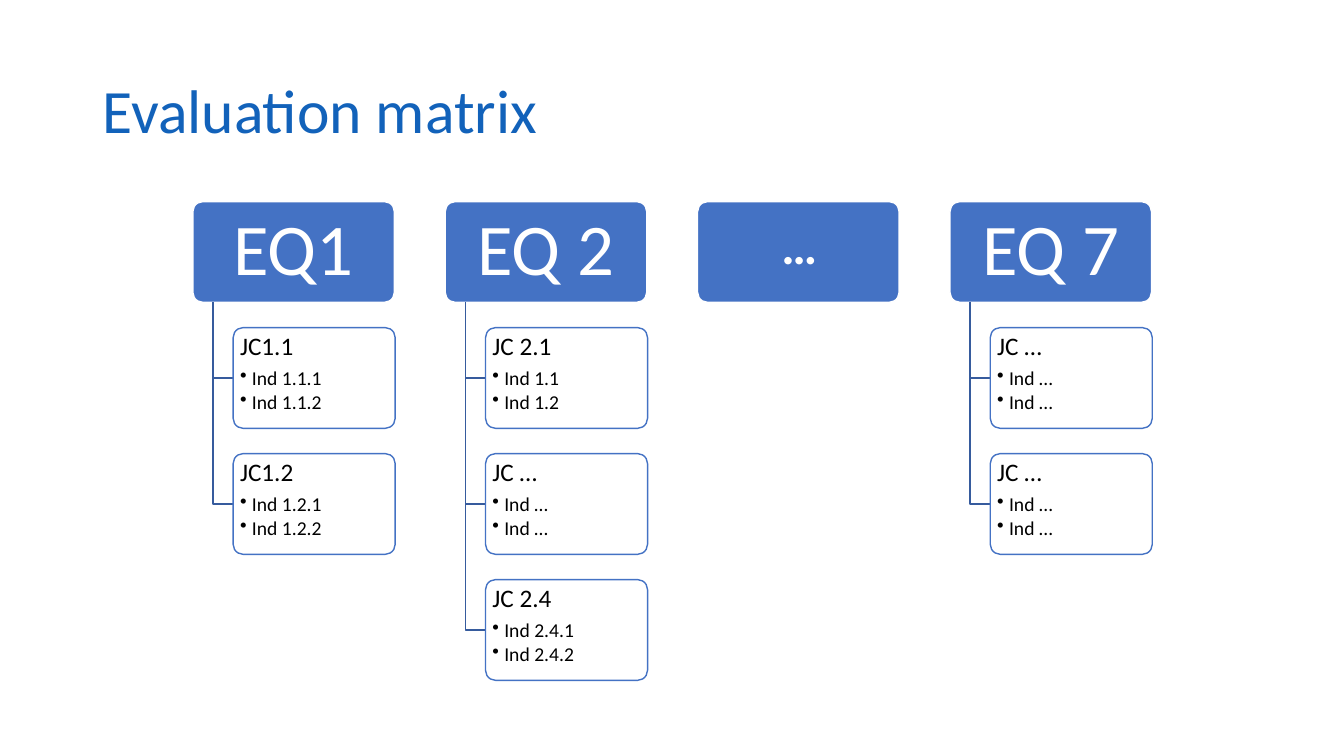
from lxml.etree import SubElement
from pptx import Presentation
from pptx.dml.color import RGBColor
from pptx.enum.shapes import MSO_SHAPE
from pptx.enum.text import MSO_ANCHOR, PP_ALIGN
from pptx.oxml.ns import qn
from pptx.util import Cm, Pt

COLORS = {
    "title": "1262BA",
    "head": "4472C4",
    "branch": "365B9D",
    "paper": "FFFFFF",
    "ink": "000000",
}
FONT = "Calibri"

# Each question: heading, then its criteria with their indicators
MATRIX = [
    ("EQ1", [
        ("JC1.1", ["Ind 1.1.1", "Ind 1.1.2"]),
        ("JC1.2", ["Ind 1.2.1", "Ind 1.2.2"]),
    ]),
    ("EQ 2", [
        ("JC 2.1", ["Ind 1.1", "Ind 1.2"]),
        ("JC …", ["Ind …", "Ind …"]),
        ("JC 2.4", ["Ind 2.4.1", "Ind 2.4.2"]),
    ]),
    ("…", []),
    ("EQ 7", [
        ("JC …", ["Ind …", "Ind …"]),
        ("JC …", ["Ind …", "Ind …"]),
    ]),
]

# Sizes in centimetres
LEFT, TOP = 4.86, 5.08
STEP = 6.36
WIDTH, HEIGHT = 5.08, 2.54
PITCH = HEIGHT * 1.25
STEM = WIDTH * 0.1
INDENT = STEM * 2


def color(name):
    return RGBColor.from_string(COLORS[name])


def style(para, size, ink, bold=False):
    font = para.font
    font.name, font.size, font.bold = FONT, Pt(size), bold
    font.color.rgb = color(ink)


def bullet(para):
    para.level = 1
    props = para._p.get_or_add_pPr()
    props.set("marL", str(Cm(0.3)))
    props.set("indent", str(-Cm(0.3)))
    SubElement(props, qn("a:buChar")).set("char", "•")


def add_box(slide, x, y, w, h, fill, line, pad):
    """Rounded box whose text keeps the given side and top margins."""
    box = slide.shapes.add_shape(
        MSO_SHAPE.ROUNDED_RECTANGLE, Cm(x), Cm(y), Cm(w), Cm(h))
    box.adjustments[0] = 0.1
    box.shadow.inherit = False
    box.fill.solid()
    box.fill.fore_color.rgb = color(fill)
    box.line.color.rgb = color(line)
    box.line.width = Pt(1)
    frame = box.text_frame
    frame.word_wrap = True
    frame.margin_left = frame.margin_right = Cm(pad[0])
    frame.margin_top = frame.margin_bottom = Cm(pad[1])
    return frame


def add_title(slide, x, y, w, h):
    title = slide.shapes.title
    title.left, title.top, title.width, title.height = map(Cm, (x, y, w, h))
    frame = title.text_frame
    frame.text = "Evaluation matrix"
    frame.vertical_anchor = MSO_ANCHOR.MIDDLE
    para = frame.paragraphs[0]
    para.alignment = PP_ALIGN.LEFT
    para.line_spacing = 0.9
    style(para, 44, "title")


def add_head(slide, x, y, text):
    frame = add_box(slide, x, y, WIDTH, HEIGHT, "head", "paper", (0.28, 0.18))
    frame.vertical_anchor = MSO_ANCHOR.MIDDLE
    frame.text = text
    para = frame.paragraphs[0]
    para.alignment = PP_ALIGN.CENTER
    para.line_spacing = 0.9
    style(para, 52, "paper")


def add_gap(slide, x, y):
    """Empty heading with a small label for the questions left out."""
    add_box(slide, x, y, WIDTH, HEIGHT, "head", "paper", (0.28, 0.18))
    label = slide.shapes.add_textbox(Cm(x + 1.86), Cm(y + 0.2), Cm(1.25), Cm(1.8))
    frame = label.text_frame
    frame.text = "…"
    style(frame.paragraphs[0], 36, "paper", bold=True)


def add_branch(slide, x, y, drop):
    """Elbow from the foot of a heading to the side of a card."""
    pen = slide.shapes.build_freeform(Cm(x), Cm(y))
    pen.add_line_segments(
        [(Cm(x), Cm(y + drop)), (Cm(x + STEM), Cm(y + drop))], close=False)
    elbow = pen.convert_to_shape()
    elbow.shadow.inherit = False
    elbow.fill.background()
    elbow.line.color.rgb = color("branch")
    elbow.line.width = Pt(1)


def add_card(slide, x, y, name, items):
    frame = add_box(slide, x, y, WIDTH * 0.8 + 0.02, HEIGHT,
                    "paper", "head", (0.1, 0.07))
    frame.vertical_anchor = MSO_ANCHOR.TOP
    frame.text = "\n".join([name, *items])
    for i, para in enumerate(frame.paragraphs):
        para.alignment = PP_ALIGN.LEFT
        para.line_spacing = 0.9
        para.space_after = Pt(2 if i else 6)
        if i:
            bullet(para)
        style(para, 14 if i else 18, "ink")


def add_column(slide, x, y, name, cards):
    if not cards:
        add_gap(slide, x, y)
        return
    add_head(slide, x, y, name)
    for row, (card, items) in enumerate(cards, 1):
        drop = row * PITCH - HEIGHT / 2
        add_branch(slide, x + STEM, y + HEIGHT, drop)
        add_card(slide, x + INDENT, y + row * PITCH, card, items)


def main():
    deck = Presentation()
    deck.slide_width, deck.slide_height = Cm(33.87), Cm(19.05)
    slide = deck.slides.add_slide(deck.slide_layouts[5])
    add_title(slide, 2.33, 1.01, 29.21, 3.68)
    for col, (name, cards) in enumerate(MATRIX):
        add_column(slide, LEFT + col * STEP, TOP, name, cards)
    deck.save("out.pptx")


if __name__ == "__main__":
    main()
